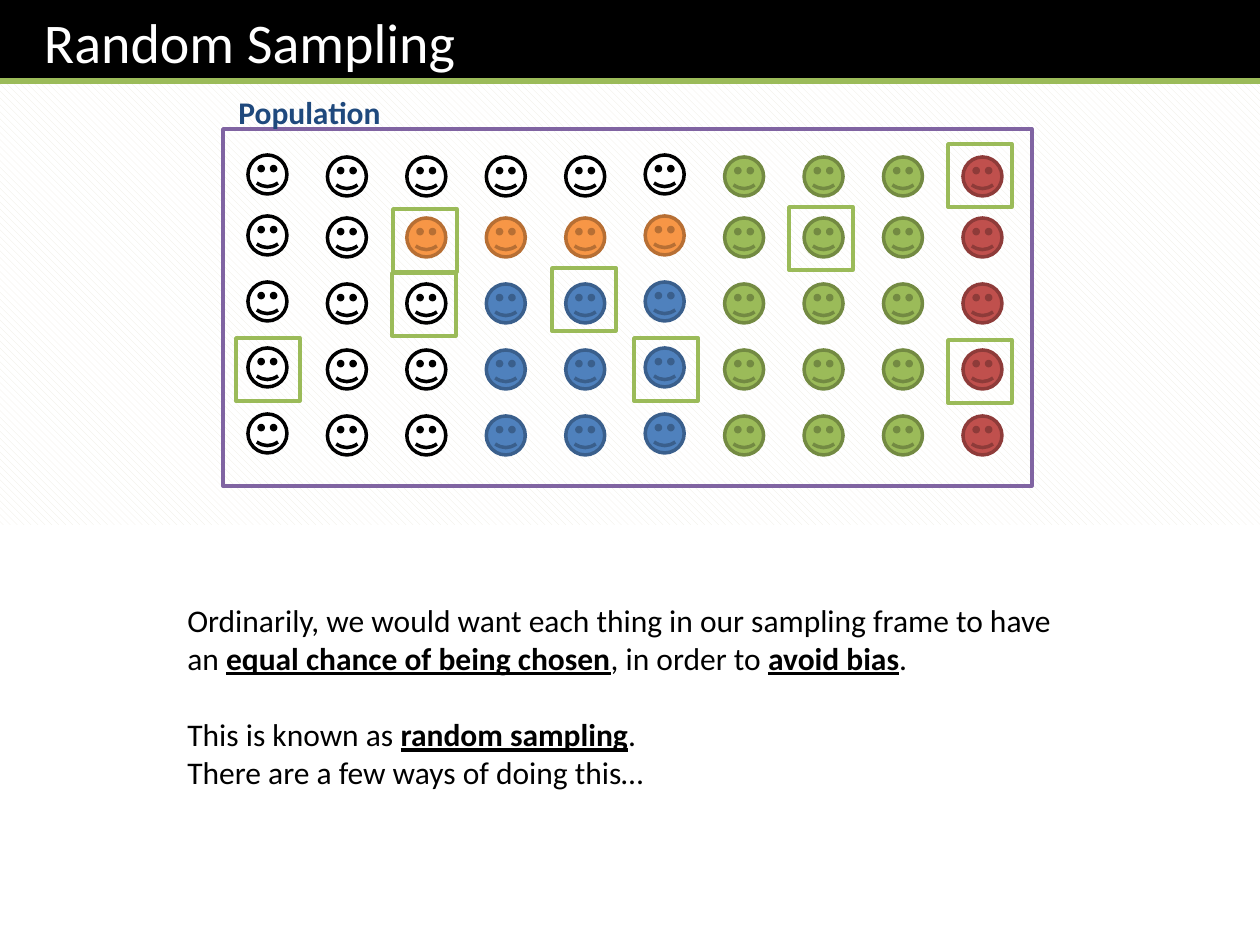
"""Build the Random Sampling slide."""
import pptx
import pptx.dml.color
import pptx.enum.dml
import pptx.enum.shapes
import pptx.enum.text
import pptx.oxml
import pptx.util

TITLE = "Random Sampling"
POPULATION = "Population"
EXPLANATION = [
    {"gap": 22, "runs": [
        ("Ordinarily, we would want each thing in our sampling frame to have an ", False),
        ("equal chance of being chosen", True), (", in order to ", False),
        ("avoid bias", True), (".", False)]},
    {"gap": 0, "runs": [("This is known as ", False), ("random sampling", True), (".", False)]},
    {"gap": 0, "runs": [("There are a few ways of doing this…", False)]},
]
FACES = ["WWWWWWGGGR", "WWOOOOGGGR", "WWWBBBGGGR", "WWWBBBGGGR", "WWWBBBGGGR"]
FACE_COLORS = {
    "W": ("FFFFFF", "000000"), "G": ("9BBB59", "738A42"), "R": ("C0504D", "8E3B39"),
    "O": ("F79646", "B76F34"), "B": ("4F81BD", "3A5F8C"),
}
ROW_TOPS = [157, 218, 284, 350, 416]
FIRST_LEFT, LAST_LEFT, FACE_SIZE = 248, 963, 39
RAISED_COLUMNS, RAISE = (0, 5), 2
SAMPLED = [(552, 268), (393, 209), (236, 338), (392, 273),
           (634, 338), (789, 207), (948, 340), (948, 144)]
SAMPLE_SIZE = (64, 63)
GREEN, PURPLE, NAVY, BLACK, WHITE = "9BBB59", "8064A2", "1F497D", "000000", "FFFFFF"
RECT = pptx.enum.shapes.MSO_SHAPE.RECTANGLE
SMILEY = pptx.enum.shapes.MSO_SHAPE.SMILEY_FACE


def px(length):
    return pptx.util.Emu(round(length * 914400 / 126))


def color(value):
    return pptx.dml.color.RGBColor.from_string(value)


def add_outline(line, value, width):
    line.color.rgb = color(value)
    line.width = pptx.util.Pt(width)


def add_box(shapes, kind, place, fill=None, outline=None):
    box = shapes.add_shape(kind, *map(px, place))
    box.shadow.inherit = False
    if fill:
        box.fill.solid()
        box.fill.fore_color.rgb = color(fill)
    else:
        box.fill.background()
    if outline:
        add_outline(box.line, outline, 2)
    else:
        box.line.fill.background()
    return box


def set_frame(frame, **changes):
    values = {"word_wrap": True, "auto_size": pptx.enum.text.MSO_AUTO_SIZE.SHAPE_TO_FIT_TEXT}
    for key, value in (values | changes).items():
        setattr(frame, key, value)


def add_run(paragraph, text, size, value, **style):
    run = paragraph.add_run()
    run.text = text
    paragraph.alignment = pptx.enum.text.PP_ALIGN.LEFT
    values = {"name": "Calibri", "size": pptx.util.Pt(size)} | style
    for key, setting in values.items():
        setattr(run.font, key, setting)
    run.font.color.rgb = color(value)


def add_header(slide):
    header = slide.shapes.add_group_shape().shapes
    banner = add_box(header, RECT, (0, 0, 1260, 83), BLACK)
    set_frame(banner.text_frame, margin_left=px(44))
    add_run(banner.text_frame.paragraphs[0], TITLE, 32, WHITE)
    rule = header.add_connector(pptx.enum.shapes.MSO_CONNECTOR.STRAIGHT,
                                px(0), px(81), px(1260), px(81))
    add_outline(rule.line, GREEN, 3)
    rule.element.spPr.append(pptx.oxml.parse_xml(
        '<a:effectLst xmlns:a="http://schemas.openxmlformats.org/drawingml/2006/main"/>'))


def add_population(slide):
    for top, row in zip(ROW_TOPS, FACES):
        for column, group in enumerate(row):
            left = FIRST_LEFT + (LAST_LEFT - FIRST_LEFT) * column / (len(row) - 1)
            lift = RAISE if column in RAISED_COLUMNS else 0
            add_box(slide.shapes, SMILEY, (left, top - lift, FACE_SIZE, FACE_SIZE),
                    *FACE_COLORS[group])
    add_box(slide.shapes, RECT, (223, 129, 809, 357), outline=PURPLE)
    label = slide.shapes.add_textbox(*map(px, (226, 87, 179, 50))).text_frame
    set_frame(label)
    add_run(label.paragraphs[0], POPULATION, 18, NAVY, bold=True)
    for corner in SAMPLED:
        add_box(slide.shapes, RECT, corner + SAMPLE_SIZE, outline=GREEN)


def add_explanation(slide):
    frame = slide.shapes.add_textbox(*map(px, (175, 595, 893, 204))).text_frame
    set_frame(frame)
    for index, content in enumerate(EXPLANATION):
        paragraph = frame.add_paragraph() if index else frame.paragraphs[0]
        paragraph.space_after = pptx.util.Pt(content["gap"])
        for text, key_term in content["runs"]:
            add_run(paragraph, text, 18, BLACK, bold=key_term, underline=key_term)


def main():
    deck = pptx.Presentation()
    deck.slide_width, deck.slide_height = px(1260), px(945)
    slide = deck.slides.add_slide(deck.slide_layouts[6])
    backdrop = add_box(slide.shapes, RECT, (0, 84, 1260, 441))
    backdrop.fill.patterned()
    backdrop.fill.pattern = pptx.enum.dml.MSO_PATTERN.WIDE_DOWNWARD_DIAGONAL
    backdrop.fill.fore_color.rgb = color("EEECE1")
    backdrop.fill.back_color.rgb = color(WHITE)
    add_header(slide)
    add_population(slide)
    add_explanation(slide)
    deck.save("out.pptx")


if __name__ == "__main__":
    main()
